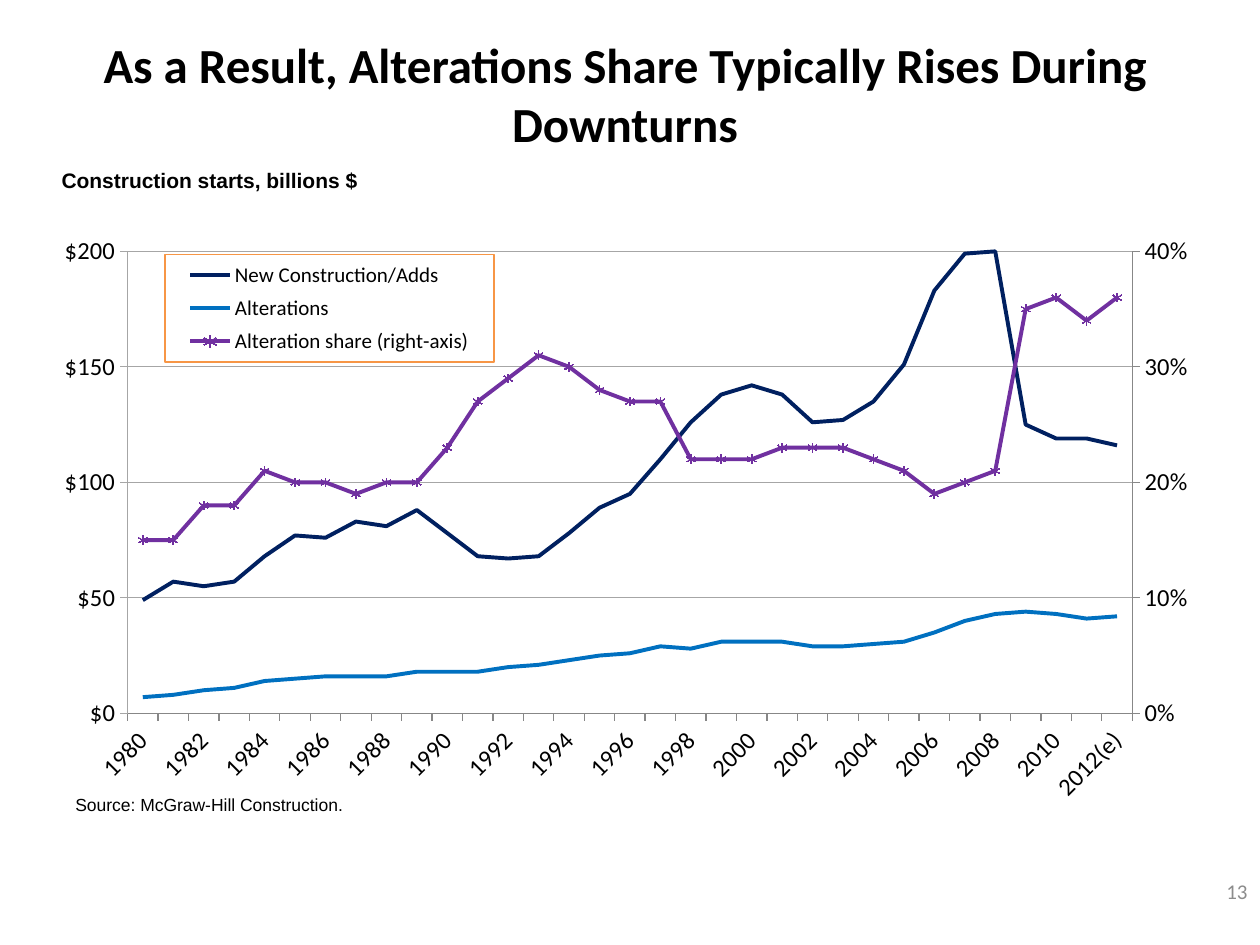
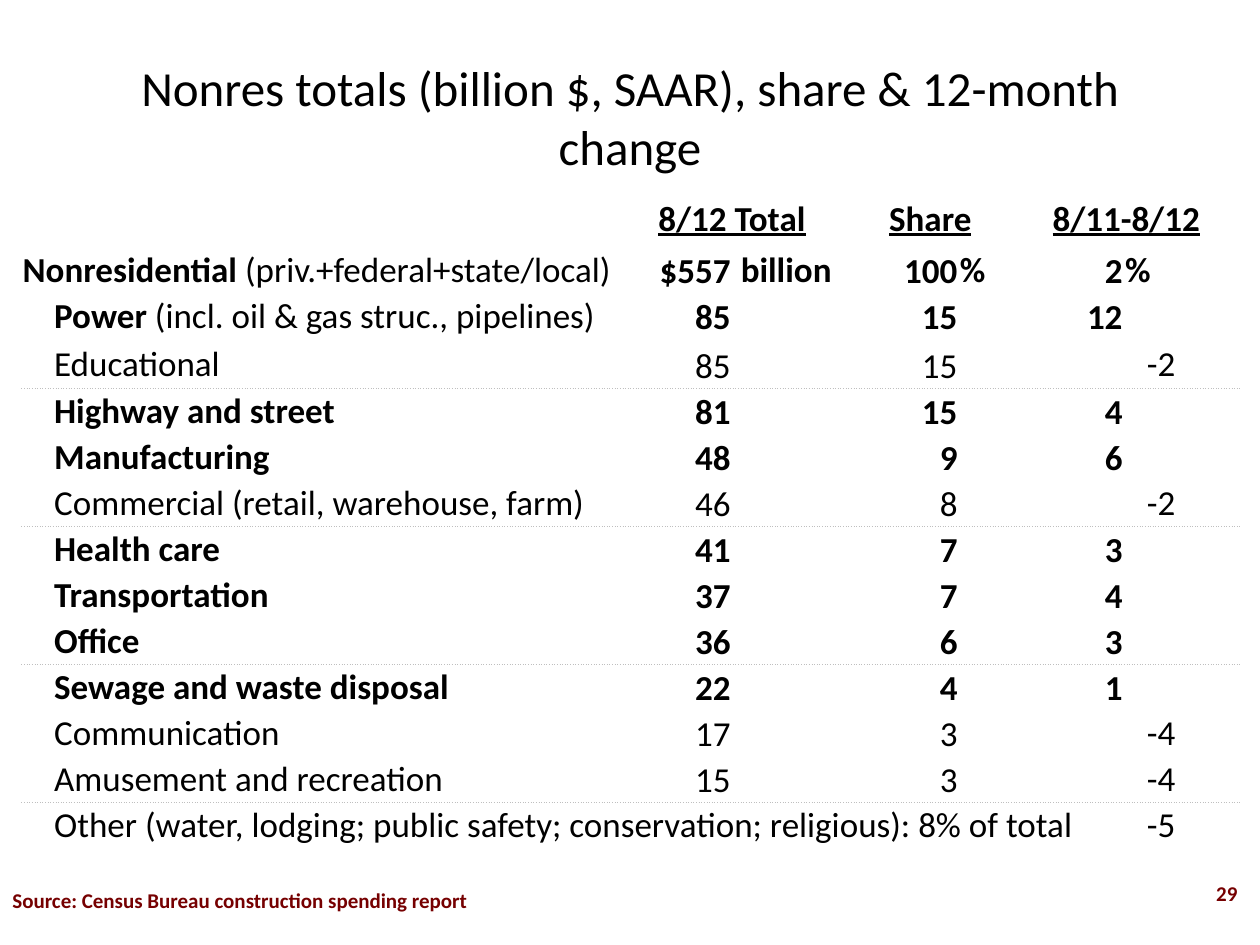
import copy

import pptx
import pptx.chart.data
import pptx.dml.color
import pptx.enum.chart
import pptx.enum.text
import pptx.oxml
import pptx.oxml.ns
import pptx.util
from lxml import etree

Inches = pptx.util.Inches
Pt = pptx.util.Pt
qn = pptx.oxml.ns.qn
ALIGN = pptx.enum.text.PP_ALIGN
ANCHOR = pptx.enum.text.MSO_ANCHOR

COLORS = {
    "text": "000000", "page_number": "8C8C8C", "credit": "760001",
    "grid": "A6A6A6", "axis": "878787", "rule": "BFBFBF",
    "new": "002060", "alterations": "0070C0", "share": "7030A0",
    "legend_border": "F79646", "legend_fill": "FFFFFF",
}
NO_STYLE = "{2D5ABB26-0587-4C30-8999-92F81FD0307C}"

YEARS = [str(year) for year in range(1980, 2012)] + ["2012(e)"]
STARTS = [
    ("New Construction/Adds", "new",
     [49, 57, 55, 57, 68, 77, 76, 83, 81, 88, 78, 68, 67, 68, 78, 89, 95, 110, 126, 138, 142,
      138, 126, 127, 135, 151, 183, 199, 200, 125, 119, 119, 116]),
    ("Alterations", "alterations",
     [7, 8, 10, 11, 14, 15, 16, 16, 16, 18, 18, 18, 20, 21, 23, 25, 26, 29, 28, 31, 31,
      31, 29, 29, 30, 31, 35, 40, 43, 44, 43, 41, 42]),
    ("Alteration share (right-axis)", "share",
     [0.15, 0.15, 0.18, 0.18, 0.21, 0.2, 0.2, 0.19, 0.2, 0.2, 0.23, 0.27, 0.29, 0.31, 0.3,
      0.28, 0.27, 0.27, 0.22, 0.22, 0.22, 0.23, 0.23, 0.23, 0.22, 0.21, 0.19, 0.2, 0.21,
      0.35, 0.36, 0.34, 0.36]),
]

COLUMN_WIDTHS = [4.72, 0.92, 0.92, 0.88, 0.43, 0.55, 0.33, 0.42, 0.5]
HEADINGS = [(1, 2, "8/12 Total"), (3, 4, "Share"), (5, 8, "8/11-8/12")]
SPENDING = [
    ("Nonresidential", " (priv.+federal+state/local)", "$557", "100", 2),
    ("Power", " (incl. oil & gas struc., pipelines)", "85", "15", 12),
    ("Educational", "", "85", "15", -2),
    ("Highway and street", "", "81", "15", 4),
    ("Manufacturing", "", "48", "9", 6),
    ("Commercial", " (retail, warehouse, farm)", "46", "8", -2),
    ("Health care", "", "41", "7", 3),
    ("Transportation", "", "37", "7", 4),
    ("Office", "", "36", "6", 3),
    ("Sewage and waste disposal", "", "22", "4", 1),
    ("Communication", "", "17", "3", -4),
    ("Amusement and recreation", "", "15", "3", -4),
    ("Other", " (water, lodging; public safety; conservation; religious): 8% of total",
     "", "", -5),
]


def rgb(name):
    """Return the named colour."""
    return pptx.dml.color.RGBColor.from_string(COLORS[name])


def style_font(font, size, color="text", bold=False, name="Calibri"):
    """Set the face, size, weight and colour of a font."""
    font.name, font.size, font.bold = name, Pt(size), bold
    font.color.rgb = rgb(color)


def add_text(slide, box, text, size, align=ALIGN.LEFT, anchor=ANCHOR.MIDDLE, **style):
    """Add one paragraph of text in the box."""
    frame = slide.shapes.add_textbox(*map(Inches, box)).text_frame
    frame.word_wrap = True
    frame.vertical_anchor = anchor
    frame.text = text
    paragraph = frame.paragraphs[0]
    paragraph.alignment = align
    style_font(paragraph.runs[0].font, size, **style)


def add_title(slide, box, text, bold=False):
    """Add the slide title."""
    add_text(slide, box, text, 28, ALIGN.CENTER, bold=bold)


def add_page_number(slide, box, number, **style):
    """Add the page number at the lower right."""
    add_text(slide, box, number, 12, ALIGN.RIGHT, **style)


def set_layout(parent, position, x, y, w, h, inner=False):
    """Place a chart part by fractions of the chart area."""
    for old in parent.findall(qn("c:layout")):
        parent.remove(old)
    layout = etree.Element(qn("c:layout"))
    manual = etree.SubElement(layout, qn("c:manualLayout"))
    parts = [("layoutTarget", "inner")] if inner else []
    parts += [("xMode", "edge"), ("yMode", "edge"), ("x", x), ("y", y), ("w", w), ("h", h)]
    for tag, value in parts:
        etree.SubElement(manual, qn("c:" + tag)).set("val", str(value))
    parent.insert(position, layout)


def style_axes(chart):
    """Format the year axis and the dollar axis."""
    years, dollars = chart.category_axis, chart.value_axis
    for axis, color in ((years, "axis"), (dollars, "grid")):
        axis.major_tick_mark = pptx.enum.chart.XL_TICK_MARK.OUTSIDE
        axis.format.line.color.rgb = rgb(color)
        axis.format.line.width = Pt(0.75)
        style_font(axis.tick_labels.font, 14)
    years.has_major_gridlines = False
    dollars.minimum_scale, dollars.maximum_scale, dollars.major_unit = 0, 200, 50
    dollars.has_major_gridlines = True
    dollars.major_gridlines.format.line.color.rgb = rgb("grid")
    dollars.major_gridlines.format.line.width = Pt(0.75)
    dollars.tick_labels.number_format = '"$"#,##0'
    dollars.tick_labels.number_format_is_linked = False
    year_xml = years._element
    year_xml.find(".//" + qn("a:bodyPr")).set("rot", "-2700000")
    skip = etree.Element(qn("c:tickLblSkip"))
    skip.set("val", "2")
    year_xml.find(qn("c:noMultiLvlLbl")).addprevious(skip)


def move_share_to_right_axis(chart):
    """Give the last series its own percentage axis on the right."""
    left_lines = chart._chartSpace.find(".//" + qn("c:lineChart"))
    right_lines = copy.deepcopy(left_lines)
    left_lines.remove(left_lines.findall(qn("c:ser"))[-1])
    for series in right_lines.findall(qn("c:ser"))[:-1]:
        right_lines.remove(series)
    left_lines.addnext(right_lines)

    dollars, years = chart.value_axis._element, chart.category_axis._element
    percent, hidden_years = copy.deepcopy(dollars), copy.deepcopy(years)
    for axis, own, other in ((hidden_years, "501", "502"), (percent, "502", "501")):
        axis.find(qn("c:axId")).set("val", own)
        axis.find(qn("c:crossAx")).set("val", other)
    for reference, axis_id in zip(right_lines.findall(qn("c:axId")), ("501", "502")):
        reference.set("val", axis_id)
    hidden_years.find(qn("c:delete")).set("val", "1")
    percent.remove(percent.find(qn("c:majorGridlines")))
    percent.find(qn("c:numFmt")).set("formatCode", "0%")
    for tag, value in (("axPos", "r"), ("crosses", "max"), ("majorUnit", "0.1"),
                       ("max", "0.4")):
        percent.find(".//" + qn("c:" + tag)).set("val", value)
    percent.find(".//" + qn("a:srgbClr")).set("val", COLORS["axis"])
    dollars.addnext(percent)
    percent.addnext(hidden_years)


def add_legend(chart):
    """Add the framed legend over the upper left of the plot."""
    chart.has_legend = True
    chart.legend.position = pptx.enum.chart.XL_LEGEND_POSITION.RIGHT
    chart.legend.include_in_layout = False
    style_font(chart.legend.font, 12)
    legend = chart.legend._element
    set_layout(legend, 1, 0.09, 0.08, 0.29, 0.17)
    frame = etree.Element(qn("c:spPr"))
    fill = etree.SubElement(frame, qn("a:solidFill"))
    line = etree.SubElement(frame, qn("a:ln"), w=str(Pt(0.75)))
    line_fill = etree.SubElement(line, qn("a:solidFill"))
    for parent, color in ((fill, "legend_fill"), (line_fill, "legend_border")):
        etree.SubElement(parent, qn("a:srgbClr"), val=COLORS[color])
    legend.find(qn("c:overlay")).addnext(frame)


def add_starts_chart(slide, box):
    """Add construction starts with the alteration share on a right axis."""
    starts = pptx.chart.data.CategoryChartData()
    starts.categories = YEARS
    for name, _, values in STARTS:
        starts.add_series(name, values)
    chart = slide.shapes.add_chart(
        pptx.enum.chart.XL_CHART_TYPE.LINE, *map(Inches, box), starts).chart
    chart.has_title = False
    style_font(chart.font, 14)
    chart.plots[0].vary_by_categories = False
    for series, (_, color, _) in zip(chart.plots[0].series, STARTS):
        series.smooth = False
        series.format.line.color.rgb = rgb(color)
        series.format.line.width = Pt(2.25)
    marker = series.marker
    marker.style, marker.size = pptx.enum.chart.XL_MARKER_STYLE.STAR, 5
    marker.format.fill.background()
    marker.format.line.color.rgb = rgb("share")
    style_axes(chart)
    add_legend(chart)
    move_share_to_right_axis(chart)
    plot_area = chart._chartSpace.find(".//" + qn("c:plotArea"))
    set_layout(plot_area, 0, 0.057, 0.075, 0.886, 0.732, inner=True)


def fill_cell(cell, pieces, align=ALIGN.LEFT, anchor=ANCHOR.MIDDLE, indent=0.01):
    """Write (text, bold) pieces into a table cell."""
    cell.margin_left, cell.vertical_anchor = Inches(indent), anchor
    paragraph = cell.text_frame.paragraphs[0]
    paragraph.alignment = align
    for text, bold in pieces:
        if text:
            run = paragraph.add_run()
            run.text = text
            style_font(run.font, 20, bold=bold)


def add_dotted_rule(cell):
    """Draw a dotted line under a table cell."""
    line = etree.Element(qn("a:lnB"), w=str(Pt(0.25)))
    fill = etree.SubElement(line, qn("a:solidFill"))
    etree.SubElement(fill, qn("a:srgbClr"), val=COLORS["rule"])
    etree.SubElement(line, qn("a:prstDash"), val="sysDot")
    cell._tc.get_or_add_tcPr().insert(0, line)


def add_spending_table(slide, box):
    """Add the table of spending totals, shares and changes."""
    table = slide.shapes.add_table(
        len(SPENDING) + 1, len(COLUMN_WIDTHS), *map(Inches, box)).table
    table.first_row = table.horz_banding = False
    table._tbl.tblPr.find(qn("a:tableStyleId")).text = NO_STYLE
    for column, width in zip(table.columns, COLUMN_WIDTHS):
        column.width = Inches(width)
    special_heights = {0: 0.46, 3: 0.39}
    usual_height = (box[3] - sum(special_heights.values())) / (len(SPENDING) - 1)
    for index, row in enumerate(table.rows):
        row.height = Inches(special_heights.get(index, usual_height))
        for cell in row.cells:
            cell.fill.background()
            cell.margin_left = cell.margin_right = cell.margin_top = Inches(0.01)
            cell.margin_bottom = 0
            if index in range(3, len(SPENDING), 3):
                add_dotted_rule(cell)

    for first, last, heading in HEADINGS:
        cell = table.cell(0, first)
        cell.merge(table.cell(0, last))
        fill_cell(cell, [(heading, True)], ALIGN.CENTER, ANCHOR.BOTTOM)
        cell.margin_bottom = Inches(0.05)
        cell.text_frame.paragraphs[0].runs[0].font.underline = True

    for index, (sector, detail, total, share, change) in enumerate(SPENDING, 1):
        rising = change > 0
        fill_cell(table.cell(index, 0), [(sector, rising), (detail, False)],
                  indent=0.01 if index == 1 else 0.26)
        for column, value in ((1, total), (3, share)):
            fill_cell(table.cell(index, column), [(value, rising)], ALIGN.RIGHT, ANCHOR.BOTTOM)
        fill_cell(table.cell(index, 6 if rising else 7), [(str(change), rising)],
                  ALIGN.RIGHT, ANCHOR.BOTTOM if rising else ANCHOR.MIDDLE)
    for column, unit, indent in ((2, "billion", 0.07), (4, "%", 0.01), (7, "%", 0.01)):
        fill_cell(table.cell(1, column), [(unit, True)], indent=indent)
    table.cell(len(SPENDING), 0).merge(table.cell(len(SPENDING), 5))


def build_alterations_slide(slide):
    """Build the slide on the alterations share."""
    add_title(slide, (0.25, 0.33, 9.42, 0.83),
              "As a Result, Alterations Share Typically Rises During Downturns", bold=True)
    add_starts_chart(slide, (0.5, 1.62, 9, 5.01))
    add_page_number(slide, (7.67, 6.81, 2.33, 0.53), "13", color="page_number")
    add_text(slide, (0.39, 1.28, 3.24, 0.3), "Construction starts, billions $", 12,
             anchor=ANCHOR.TOP, bold=True, name="Arial")
    add_text(slide, (0.5, 6.25, 9.04, 0.27), "Source: McGraw-Hill Construction.", 10,
             anchor=ANCHOR.TOP, name="Arial")


def build_spending_slide(slide):
    """Build the slide on nonresidential spending."""
    add_title(slide, (0.5, 0.3, 9, 1.25),
              "Nonres totals (billion $, SAAR), share & 12-month change")
    add_spending_table(slide, (0.17, 1.5, 9.67, 5.23))
    add_page_number(slide, (8.25, 6.83, 1.67, 0.52), "29", color="credit", bold=True)
    add_text(slide, (0, 6.92, 7.25, 0.45),
             "Source: Census Bureau construction spending report", 12,
             color="credit", bold=True)


def main():
    """Build and save the presentation."""
    deck = pptx.Presentation()
    deck.slide_width, deck.slide_height = Inches(10), Inches(7.5)
    for build in (build_alterations_slide, build_spending_slide):
        build(deck.slides.add_slide(deck.slide_layouts[6]))
    deck.save("out.pptx")


if __name__ == "__main__":
    main()
